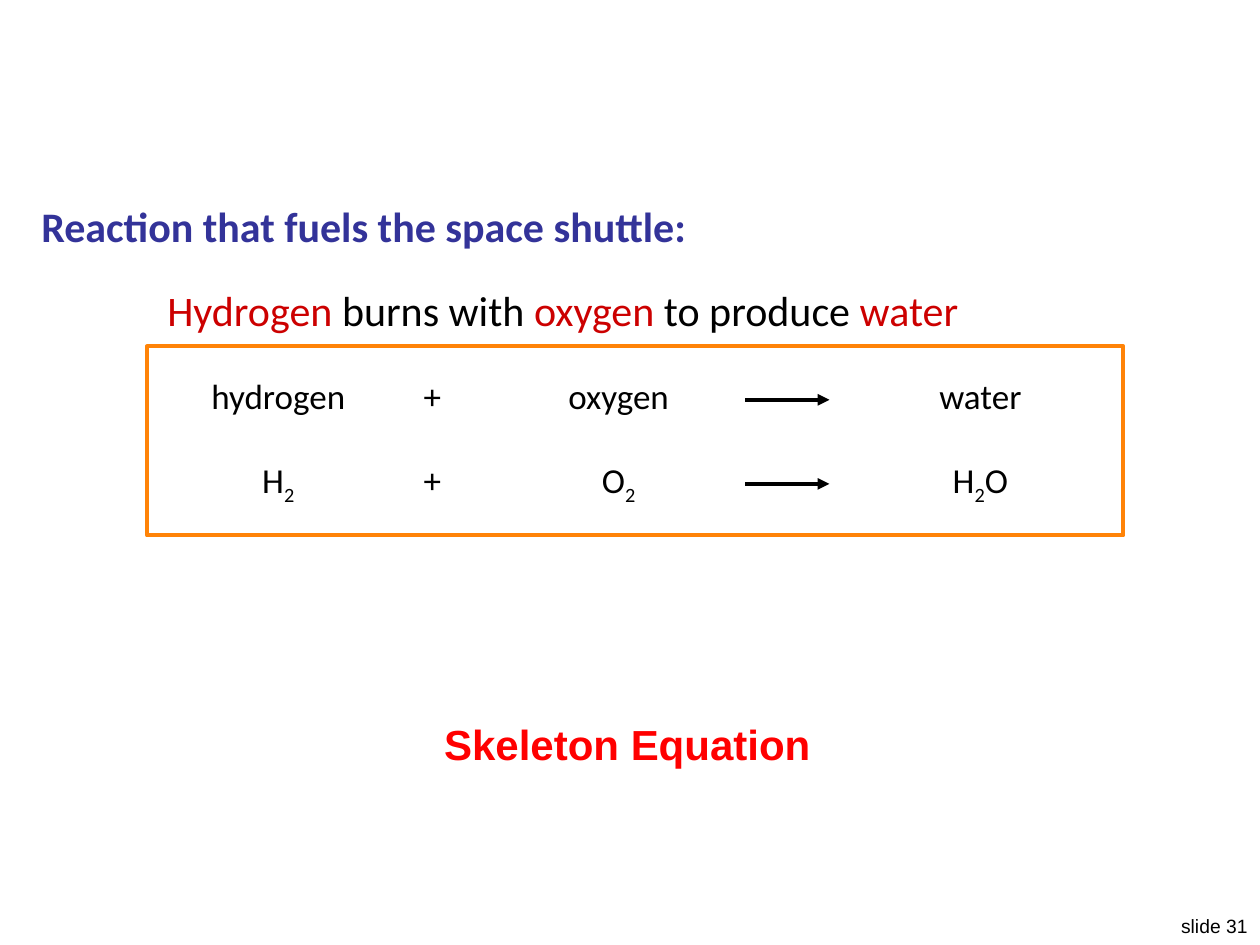
from pptx import Presentation
from pptx.dml.color import RGBColor
from pptx.enum.shapes import MSO_CONNECTOR, MSO_SHAPE
from pptx.enum.text import PP_ALIGN
from pptx.oxml.ns import qn
from pptx.util import Pt
from lxml import etree

LEFT, MID, RIGHT = PP_ALIGN.LEFT, PP_ALIGN.CENTER, PP_ALIGN.RIGHT
RECT, LINE = MSO_SHAPE.RECTANGLE, MSO_CONNECTOR.STRAIGHT

THEME = {
    "black": "000000", "blue": "333399", "dark red": "CC0000",
    "red": "FF0000", "orange": "FF8307",
    "head": "Calibri", "label": "Arial",
    "big": 24, "term": 20, "small": 11, "rule": 2.25,
}

# Content: a paragraph is a list of (text, style) runs
TITLE = [("Reaction that fuels the space shuttle:", "blue")]
STORY = [("Hydrogen", "dark red"), (" burns with ", "black"),
         ("oxygen", "dark red"), (" to produce ", "black"),
         ("water", "dark red")]
# Columns of the equation: left, width, word, formula (digits are subscripts)
TERMS = [
    (110, 98, "hydrogen", "H2"),
    (234, 26, "+", "+"),
    (314, 79, "oxygen", "O2"),
    (528.5, 63.5, "water", "H2O"),
]
TOP, ROW = 210.5, 48          # equation top and row pitch
ARROW = (426, 474, 228.5)     # from x, to x, y of first row


def color(name):
    return RGBColor.from_string(THEME[name])


def add_text(slide, box, paras, font, size, align=LEFT, bold=(), gap=0):
    shape = slide.shapes.add_textbox(*map(Pt, box))
    frame = shape.text_frame
    frame.word_wrap = True
    for i, runs in enumerate(paras):
        para = frame.paragraphs[0] if i == 0 else frame.add_paragraph()
        para.alignment = align
        para.space_before = Pt(gap if i else 0)
        para.font.name, para.font.size = THEME[font], Pt(THEME[size])
        para.font.bold = i in bold
        for text, tone in runs:
            run = para.add_run()
            run.text = text
            run.font.color.rgb = color(tone)
    return frame


def add_arrow(slide, x1, x2, y):
    line = slide.shapes.add_connector(LINE, Pt(x1), Pt(y), Pt(x2), Pt(y))
    line.line.color.rgb = color("black")
    line.line.width = Pt(THEME["rule"])
    etree.SubElement(line.line._get_or_add_ln(), qn("a:tailEnd"), type="triangle")
    etree.SubElement(line._element.spPr, qn("a:effectLst"))


def main():
    deck = Presentation()
    deck.slide_width, deck.slide_height = Pt(720), Pt(540)
    slide = deck.slides.add_slide(deck.slide_layouts[6])

    # Slide number
    add_text(slide, (666, 519, 54, 21), [[("slide 31", "black")]],
             "label", "small", RIGHT)

    # Word equation above skeleton equation
    for left, width, word, formula in TERMS:
        rows = [[(word, "black")], [(char, "black") for char in formula]]
        frame = add_text(slide, (left, TOP, width, 79), rows,
                         "head", "term", MID, gap=ROW - 24)
        for run in frame.paragraphs[1].runs:
            if run.text.isdigit():
                run.font._element.set("baseline", "-25000")
    for row in range(2):
        x1, x2, y = ARROW
        add_arrow(slide, x1, x2, y + row * ROW)

    # Frame around both equations
    frame = slide.shapes.add_shape(RECT, Pt(84), Pt(198), Pt(558), Pt(108))
    frame.shadow.inherit = False
    frame.fill.background()
    frame.line.color.rgb = color("orange")
    frame.line.width = Pt(THEME["rule"])

    # Heading and indented sentence
    text = add_text(slide, (16.5, 111, 577, 84), [TITLE, STORY],
                    "head", "big", bold=(0,), gap=19)
    text.paragraphs[1]._p.get_or_add_pPr().set("marL", str(Pt(72)))

    # Caption
    add_text(slide, (242, 407, 233, 36), [[("Skeleton Equation", "red")]],
             "label", "big", MID, bold=(0,))

    deck.save("out.pptx")


if __name__ == "__main__":
    main()
